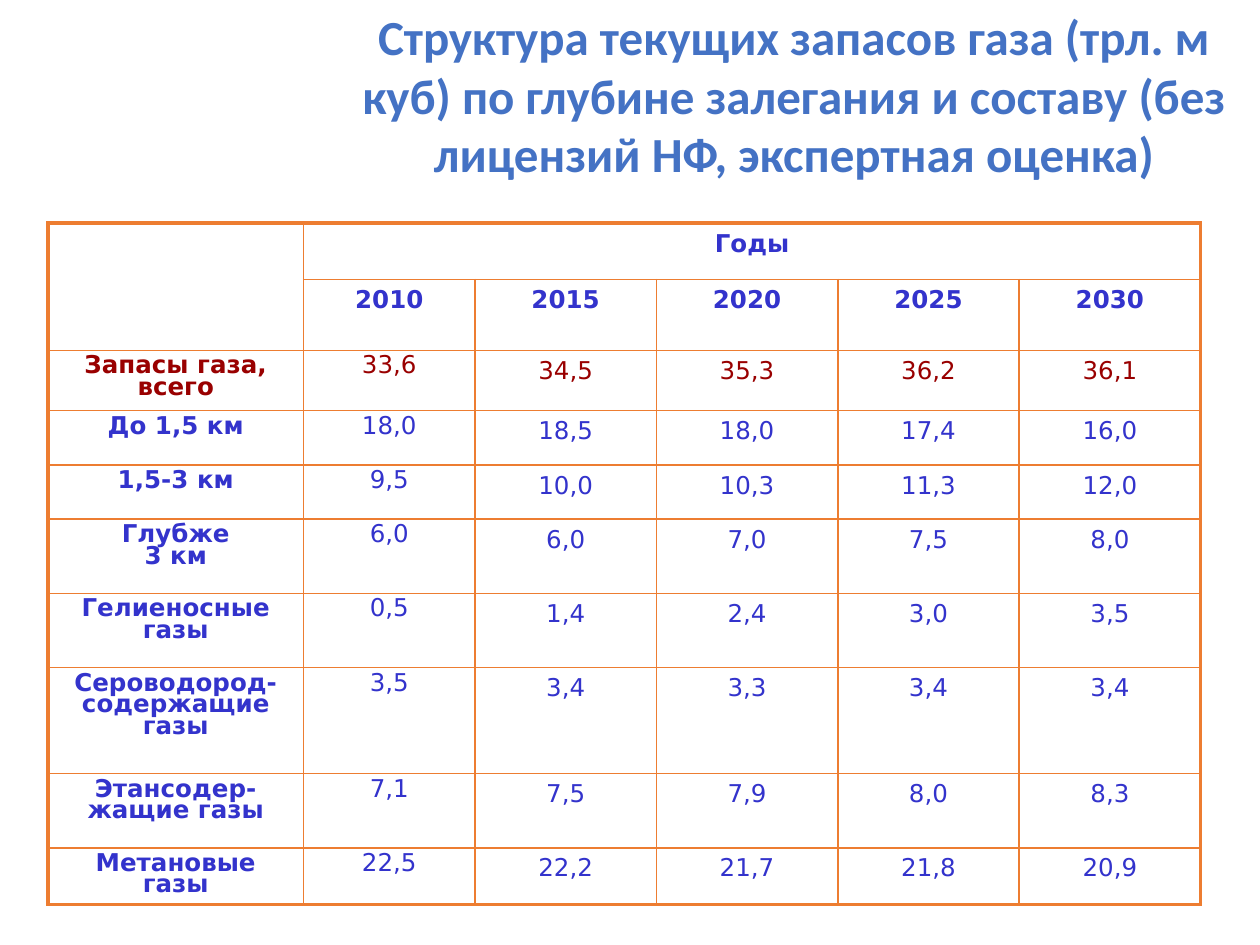
from lxml.etree import SubElement
from pptx import Presentation
from pptx.dml.color import RGBColor
from pptx.enum.text import MSO_ANCHOR, MSO_AUTO_SIZE, PP_ALIGN
from pptx.oxml.ns import qn
from pptx.util import Inches, Pt

# Content
TITLE = ("Структура текущих запасов газа (трл. м куб) по глубине залегания "
         "и составу (без лицензий НФ, экспертная оценка)")
ROWS = [
    ["", "Годы", "", "", "", ""],
    ["", "2010", "2015", "2020", "2025", "2030"],
    ["Запасы газа,\nвсего", "33,6", "34,5", "35,3", "36,2", "36,1"],
    ["До 1,5 км", "18,0", "18,5", "18,0", "17,4", "16,0"],
    ["1,5-3 км", "9,5", "10,0", "10,3", "11,3", "12,0"],
    ["Глубже\n3 км", "6,0", "6,0", "7,0", "7,5", "8,0"],
    ["Гелиеносные газы", "0,5", "1,4", "2,4", "3,0", "3,5"],
    ["Сероводород-содержащие газы", "3,5", "3,4", "3,3", "3,4", "3,4"],
    ["Этансодер-жащие газы", "7,1", "7,5", "7,9", "8,0", "8,3"],
    ["Метановые газы", "22,5", "22,2", "21,7", "21,8", "20,9"],
]
COL_WIDTHS = [2.03, 1.36] + [1.44] * 4
ROW_HEIGHTS = [0.45, 0.56, 0.48, 0.43, 0.43, 0.59, 0.59, 0.84, 0.59, 0.44]
HEADER_ROWS, TOTAL_ROW = 2, 2
BLUE, RED, ORANGE, TITLE_BLUE = "3333CC", "990000", "ED7D31", "4472C4"


def style(p, font, size, color, bold):
    p.alignment = PP_ALIGN.CENTER
    p.font.name, p.font.size, p.font.bold = font, Pt(size), bold
    p.font.color.rgb = RGBColor.from_string(color)


def set_borders(cell, outer):
    """Draw all four sides, heavier on the sides listed in outer."""
    tcPr = cell._tc.get_or_add_tcPr()
    for side in "LRTB":
        width = Pt(2.25 if side in outer else 1)
        ln = SubElement(tcPr, qn(f"a:ln{side}"), w=str(width))
        fill = SubElement(ln, qn("a:solidFill"))
        SubElement(fill, qn("a:srgbClr"), val=ORANGE)


prs = Presentation()
prs.slide_width, prs.slide_height = Inches(10), Inches(7.5)
s = prs.slides.add_slide(prs.slide_layouts[5])

# Title
title = s.shapes.title
title.left, title.top = Inches(2.6), Inches(0)
title.width, title.height = Inches(7.4), Inches(1.51)
tf = title.text_frame
tf.text = TITLE
tf.word_wrap = True
tf.auto_size = MSO_AUTO_SIZE.SHAPE_TO_FIT_TEXT
tf.vertical_anchor = MSO_ANCHOR.TOP
style(tf.paragraphs[0], "Calibri", 28, TITLE_BLUE, True)

# Table grid
table = s.shapes.add_table(
    len(ROWS), len(COL_WIDTHS), Inches(0.38), Inches(1.77),
    Inches(sum(COL_WIDTHS)), Inches(sum(ROW_HEIGHTS))).table
table.first_row = table.horz_banding = False
for col, width in zip(table.columns, COL_WIDTHS):
    col.width = Inches(width)
for row, height in zip(table.rows, ROW_HEIGHTS):
    row.height = Inches(height)

# Table cells
last_row, last_col = len(ROWS) - 1, len(COL_WIDTHS) - 1
for r, values in enumerate(ROWS):
    for c, value in enumerate(values):
        cell = table.cell(r, c)
        cell.text = value
        edges = {"L": c == 0, "R": c == last_col, "T": r == 0, "B": r == last_row}
        set_borders(cell, [side for side, on_edge in edges.items() if on_edge])
        cell.fill.background()
        for p in cell.text_frame.paragraphs:
            style(p, "DejaVu Sans", 14, RED if r == TOTAL_ROW else BLUE,
                  r < HEADER_ROWS or c == 0)
            if r >= HEADER_ROWS and c < 2:
                p.line_spacing = 0.75

# Header spans
table.cell(0, 0).merge(table.cell(1, 0))
table.cell(0, 1).merge(table.cell(0, last_col))
# The wide header cell carries the right edge of the table
ln_right = table.cell(0, 1)._tc.tcPr.find(qn("a:lnR"))
ln_right.set("w", str(Pt(2.25)))

prs.save("out.pptx")
